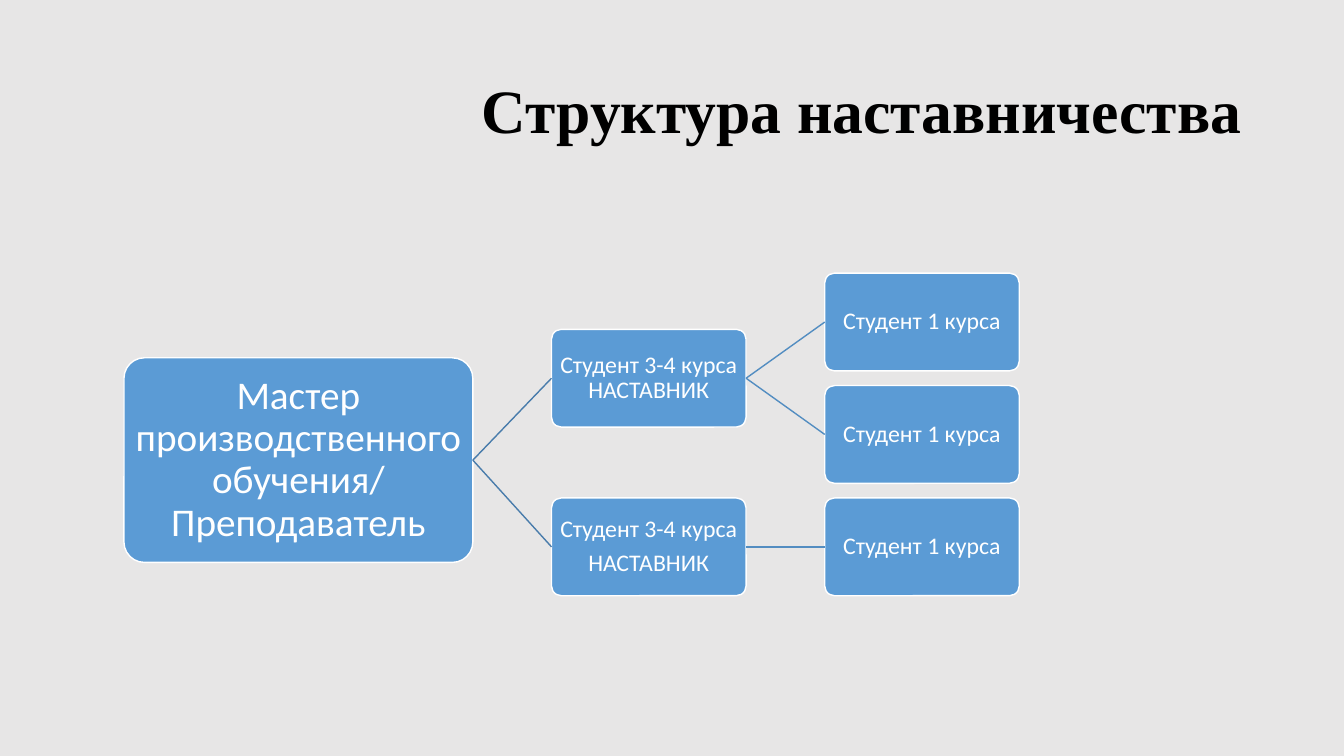
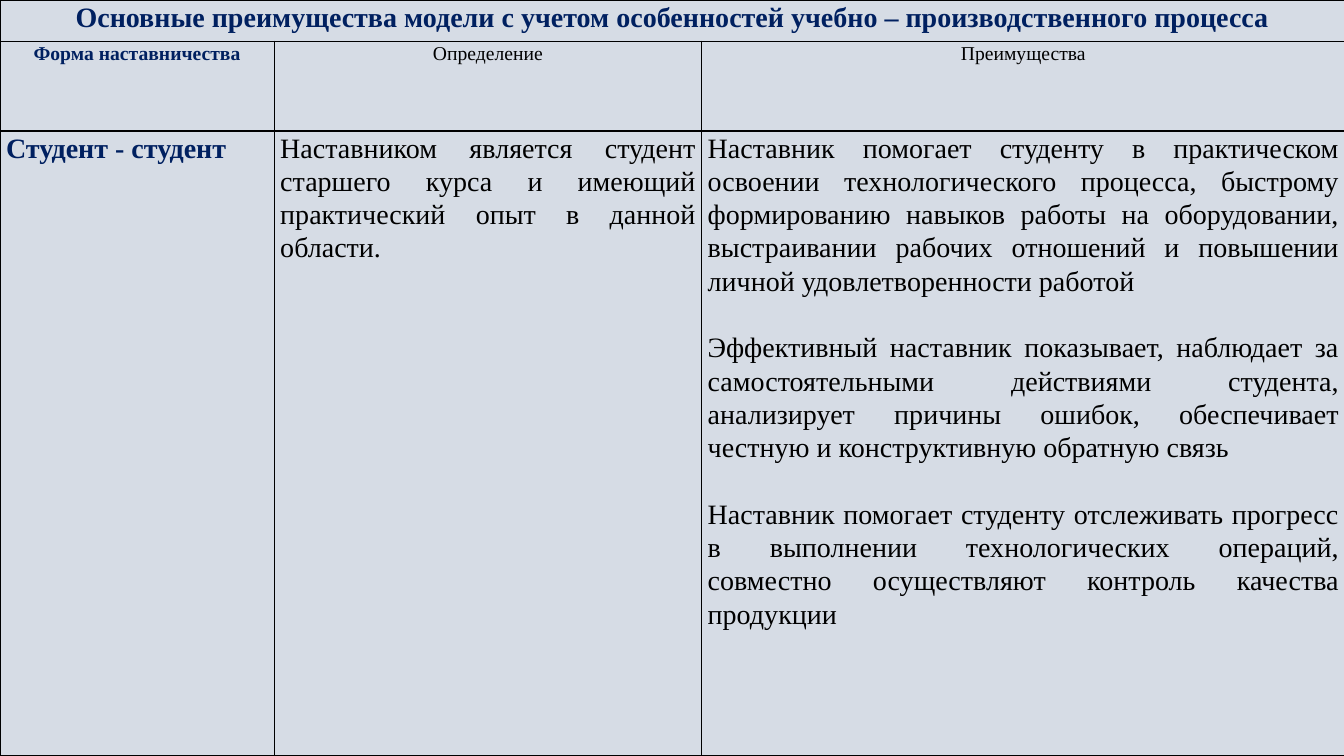
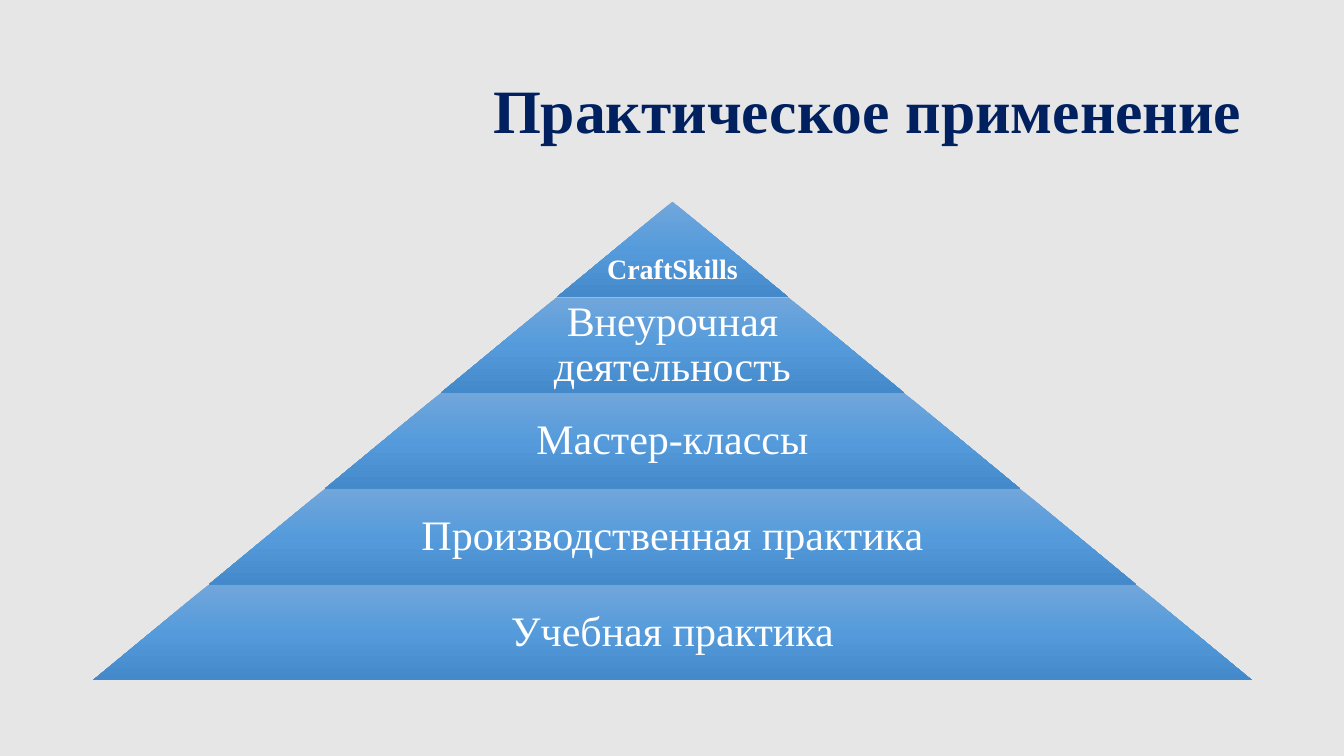
from lxml import etree
from pptx import Presentation
from pptx.dml.color import RGBColor
from pptx.enum import shapes, text
from pptx.oxml.ns import qn
from pptx.util import Inches, Pt

BACKGROUND = "E7E6E6"
NAVY, BLACK, WHITE = "002060", "000000", "FFFFFF"
NODE_BLUE, CELL_BLUE = "5B9BD5", "D6DCE5"
LEVEL_GRADIENT = [(0, "71A6DB"), (50, "559BDB"), (100, "448ACA")]
SERIF, SANS = "Times New Roman", "Calibri"
CENTER, JUSTIFY = text.PP_ALIGN.CENTER, text.PP_ALIGN.JUSTIFY
TITLE_BOX = (0.92, 0.4, 11.5, 1.45)


def rgb(color):
    return RGBColor.from_string(color)


def inches(*lengths):
    return [Inches(length) for length in lengths]


def style_text(frame, size, color, font=SERIF, bold=False, align=CENTER,
               line=0.9, after=0):
    """Format every paragraph; spacing goes between paragraphs only."""
    last = len(frame.paragraphs) - 1
    for i, paragraph in enumerate(frame.paragraphs):
        paragraph.alignment = align
        paragraph.line_spacing = line
        paragraph.space_after = Pt(after if i < last else 0)
        for run in paragraph.runs:
            run.font.size = Pt(size)
            run.font.name = font
            run.font.bold = bold
            run.font.color.rgb = rgb(color)


def set_frame(frame, inset):
    frame.word_wrap = True
    frame.vertical_anchor = text.MSO_ANCHOR.MIDDLE
    frame.margin_left = frame.margin_right = Inches(inset)
    frame.margin_top = frame.margin_bottom = Inches(inset)


def add_titled_slide(prs, heading, color):
    slide = prs.slides.add_slide(prs.slide_layouts[5])
    title = slide.shapes.title
    title.left, title.top, title.width, title.height = inches(*TITLE_BOX)
    frame = title.text_frame
    frame.text = heading
    frame.auto_size = text.MSO_AUTO_SIZE.NONE
    frame.vertical_anchor = text.MSO_ANCHOR.MIDDLE
    style_text(frame, 44, color, bold=True, align=text.PP_ALIGN.RIGHT)
    return slide


# Mentoring tree
def add_node(slide, box, label, size, inset):
    node = slide.shapes.add_shape(shapes.MSO_SHAPE.ROUNDED_RECTANGLE, *inches(*box))
    node.adjustments[0] = 0.1
    node.shadow.inherit = False
    node.fill.solid()
    node.fill.fore_color.rgb = rgb(NODE_BLUE)
    node.line.color.rgb = rgb(WHITE)
    node.line.width = Pt(1)
    node.text_frame.text = label
    set_frame(node.text_frame, inset)
    style_text(node.text_frame, size, WHITE, SANS, after=size * 0.35)
    return node


def add_branch(slide, parent, child, color):
    branch = slide.shapes.add_connector(shapes.MSO_CONNECTOR.STRAIGHT, 0, 0, 0, 0)
    branch.begin_connect(parent, 3)
    branch.end_connect(child, 1)
    branch.line.color.rgb = rgb(color)
    branch.line.width = Pt(1)
    etree.SubElement(branch._element.spPr, qn("a:effectLst"))


def add_tree(slide, box, master, mentors):
    left, top, _, height = box
    master_w, master_h, master_drop = 3.46, 2.03, 0.84
    node_w, node_h, gap = 1.93, 0.97, 0.78
    mentor_x = left + master_w + gap
    student_x = mentor_x + node_w + gap
    students = sum(len(group) for _, group in mentors)
    pitch = (height - node_h) / (students - 1)

    root = add_node(slide, (left, top + master_drop, master_w, master_h),
                    master, 28, 0.02)
    row = 0
    for mentor, group in mentors:
        mentor_y = top + (row + (len(group) - 1) / 2) * pitch
        mentor_node = add_node(slide, (mentor_x, mentor_y, node_w, node_h),
                               mentor, 17, 0.01)
        add_branch(slide, root, mentor_node, "497CAB")
        for student in group:
            student_node = add_node(
                slide, (student_x, top + row * pitch, node_w, node_h),
                student, 17, 0.01)
            add_branch(slide, mentor_node, student_node, "538DC1")
            row += 1


# Table of advantages
def set_borders(cell, color):
    props = cell._tc.get_or_add_tcPr()
    for i, side in enumerate(("a:lnL", "a:lnR", "a:lnT", "a:lnB")):
        border = etree.Element(qn(side), w=str(Pt(1)))
        fill = etree.SubElement(border, qn("a:solidFill"))
        etree.SubElement(fill, qn("a:srgbClr"), val=color)
        props.insert(i, border)


def fill_cell(cell, content, size, color, bold, align):
    cell.text_frame.text = content
    style_text(cell.text_frame, size, color, bold=bold, align=align,
               line=1.07, after=24)


def add_advantages(slide, box, heading, headers, body):
    widths, heights = (2.72, 4.24, 6.38), (0.41, 0.89, 6.2)
    table = slide.shapes.add_table(len(heights), len(widths), *inches(*box)).table
    table.first_row = table.horz_banding = False
    for column, width in zip(table.columns, widths):
        column.width = Inches(width)
    for row, height in zip(table.rows, heights):
        row.height = Inches(height)
        for cell in row.cells:
            cell.margin_left = cell.margin_right = Inches(0.06)
            cell.margin_top = cell.margin_bottom = 0
            cell.fill.solid()
            cell.fill.fore_color.rgb = rgb(CELL_BLUE)
            set_borders(cell, BLACK)

    table.cell(0, 0).merge(table.cell(0, len(widths) - 1))
    fill_cell(table.cell(0, 0), heading, 20, NAVY, True, CENTER)
    for col, (header, content) in enumerate(zip(headers, body)):
        first = col == 0
        color = NAVY if first else BLACK
        fill_cell(table.cell(1, col), header, 14, color, first, CENTER)
        fill_cell(table.cell(2, col), content, 20, color, first, JUSTIFY)


# Pyramid of practice
def fill_gradient(shape, stops):
    shape.fill.gradient()
    shape.fill.gradient_angle = 270
    stop_list = shape._element.spPr.find(".//" + qn("a:gsLst"))
    for stop in list(stop_list):
        stop_list.remove(stop)
    for percent, color in stops:
        stop = etree.SubElement(stop_list, qn("a:gs"), pos=str(percent * 1000))
        etree.SubElement(stop, qn("a:srgbClr"), val=color)


def add_pyramid(slide, box, labels):
    left, top, width, height = box
    level_h, step = height / len(labels), width / len(labels)
    center = left + width / 2
    for i, label in enumerate(labels):
        peak = i == 0
        level_w, y = step * (i + 1), top + i * level_h
        level = slide.shapes.add_shape(
            shapes.MSO_SHAPE.TRAPEZOID,
            *inches(center - level_w / 2, y, level_w, level_h))
        level.adjustments[0] = step / 2 / level_h
        level.shadow.inherit = False
        level.line.fill.background()
        fill_gradient(level, LEVEL_GRADIENT)

        # The caption is wider than the text area of a trapezoid
        caption_w = level_w if peak else level_w * 0.65
        caption = slide.shapes.add_textbox(
            *inches(center - caption_w / 2, y, caption_w, level_h)).text_frame
        caption.text = label
        set_frame(caption, 0.04)
        if peak:
            caption.margin_top = Inches(0.46)
        style_text(caption, 20 if peak else 30, WHITE, bold=peak)


def main():
    prs = Presentation()
    prs.slide_width, prs.slide_height = inches(13.33, 7.5)
    background = prs.slide_master.background.fill
    background.solid()
    background.fore_color.rgb = rgb(BACKGROUND)

    structure = add_titled_slide(prs, "Структура наставничества", BLACK)
    student = "Студент 1 курса"
    add_tree(structure, (1.23, 2.71, 8.88, 3.2),
             "Мастер производственного обучения/ Преподаватель",
             [("Студент 3-4 курса НАСТАВНИК", [student, student]),
              ("Студент 3-4 курса\nНАСТАВНИК", [student])])

    advantages = prs.slides.add_slide(prs.slide_layouts[6])
    add_advantages(
        advantages, (0, 0, 13.33, 7.5),
        "Основные преимущества модели с учетом особенностей "
        "учебно – производственного процесса",
        ["Форма наставничества", "Определение", "Преимущества"],
        ["Студент - студент",
         "Наставником является студент старшего курса и имеющий "
         "практический опыт в данной области.",
         "Наставник помогает студенту в практическом освоении "
         "технологического процесса, быстрому формированию навыков работы "
         "на оборудовании, выстраивании рабочих отношений и повышении "
         "личной удовлетворенности работой\n"
         "Эффективный наставник показывает, наблюдает за самостоятельными "
         "действиями студента, анализирует причины ошибок, обеспечивает "
         "честную и конструктивную обратную связь\n"
         "Наставник помогает студенту отслеживать прогресс в выполнении "
         "технологических операций, совместно осуществляют контроль "
         "качества продукции"])

    practice = add_titled_slide(prs, "Практическое применение", NAVY)
    add_pyramid(practice, (0.92, 2, 11.5, 4.75),
                ["CraftSkills", "Внеурочная деятельность", "Мастер-классы",
                 "Производственная практика", "Учебная практика"])

    prs.save("out.pptx")


if __name__ == "__main__":
    main()
